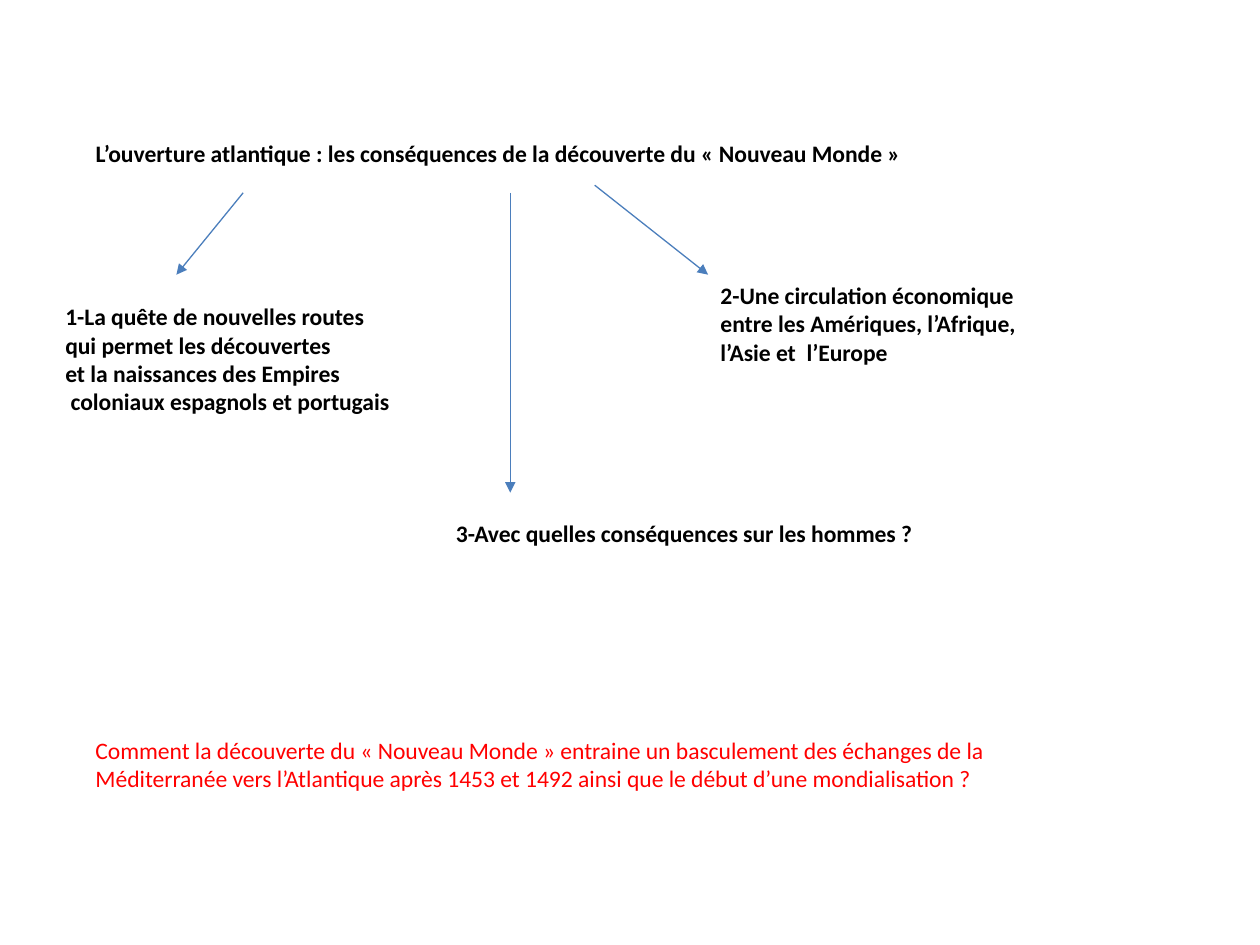
from pptx import Presentation
from pptx import util as u
from pptx.dml.color import RGBColor
from pptx.enum import shapes, text
from pptx.oxml import parse_xml
from pptx.oxml.ns import nsdecls, qn
from lxml import etree

BLACK = RGBColor(0x00, 0x00, 0x00)
RED = RGBColor(0xFF, 0x00, 0x00)
BLUE = RGBColor(0x4B, 0x7E, 0xBC)
WIDTH, HEIGHT = u.Inches(10), u.Inches(7.5)
COLS, ROWS = 100, 75

TITLE = "L’ouverture atlantique\u00a0: les conséquences de la découverte du «\u00a0Nouveau Monde\u00a0»"
BRANCHES = [
    ((4.2, 23.5, 31, 10.1), (19.3, 15.3, 14, 21.8),
     ["1-La quête de nouvelles routes", "qui permet les découvertes",
      "et la naissances des Empires", " coloniaux espagnols et portugais"]),
    ((56.2, 21.8, 44.7, 7.8), (47.2, 14.7, 56.2, 21.8),
     ["2-Une circulation économique", "entre les Amériques, l’Afrique,",
      "l’Asie et  l’Europe"]),
    ((35.2, 40.7, 46.9, 3.3), (40.5, 15.3, 40.5, 39.1),
     ["3-Avec quelles conséquences sur les hommes ?"]),
]
QUESTION = [
    "Comment la découverte du «\u00a0Nouveau Monde\u00a0» entraine un basculement des échanges de la",
    "Méditerranée vers l’Atlantique après 1453 et 1492 ainsi que le début d’une mondialisation ?",
]


def cells(values):
    units = (WIDTH / COLS, HEIGHT / ROWS) * 2
    return [round(v * unit) for v, unit in zip(values, units)]


def write(sp, lines, color=BLACK, bold=True, wrap=True):
    tf = sp.text_frame
    tf.text = "\n".join(lines)
    tf.word_wrap = wrap
    tf.auto_size = text.MSO_AUTO_SIZE.SHAPE_TO_FIT_TEXT
    tf.vertical_anchor = text.MSO_ANCHOR.TOP
    for p in tf.paragraphs:
        p.alignment = text.PP_ALIGN.LEFT
        for r in p.runs:
            r.font.name = "Calibri"
            r.font.size = u.Pt(13.5)
            r.font.bold = bold
            r.font.color.rgb = color


def add_heading(s, box):
    sp = s.shapes.title
    sp.left, sp.top, sp.width, sp.height = cells(box)
    write(sp, [TITLE])


def add_arrow(s, ends):
    line = s.shapes.add_connector(shapes.MSO_CONNECTOR.STRAIGHT, *cells(ends))
    line.line.color.rgb = BLUE
    line.line.width = u.Pt(0.75)
    etree.SubElement(line.line._get_or_add_ln(), qn("a:tailEnd"), type="triangle")
    line._element.spPr.append(parse_xml(f"<a:effectLst {nsdecls('a')}/>"))


def add_branch(s, box, ends, lines):
    write(s.shapes.add_textbox(*cells(box)), lines)
    add_arrow(s, ends)


def add_question(s, box):
    write(s.shapes.add_textbox(*cells(box)), QUESTION, RED, bold=False, wrap=False)


def main():
    prs = Presentation()
    prs.slide_width, prs.slide_height = WIDTH, HEIGHT
    s = prs.slides.add_slide(prs.slide_layouts[5])
    add_heading(s, (6.6, 10.5, 78.4, 3.3))
    for box, ends, lines in BRANCHES:
        add_branch(s, box, ends, lines)
    add_question(s, (6.6, 57.9, 74, 5.6))
    prs.save("out.pptx")


if __name__ == "__main__":
    main()
